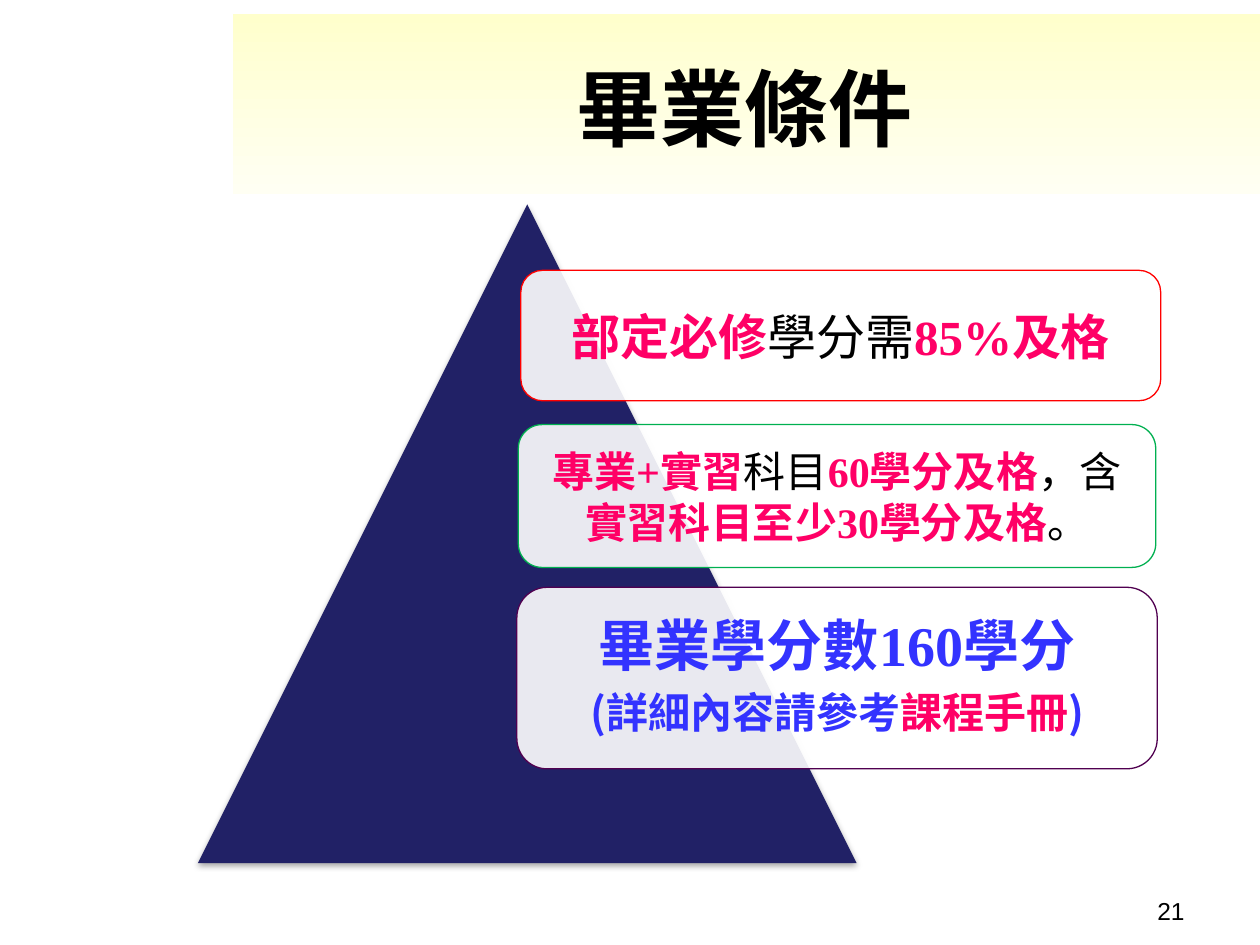
from lxml import etree
from pptx import Presentation
from pptx.dml.color import RGBColor
from pptx.enum.shapes import MSO_SHAPE
from pptx.enum.text import MSO_ANCHOR, PP_ALIGN
from pptx.oxml.ns import qn
from pptx.util import Cm, Pt

RECTANGLE, TRIANGLE = MSO_SHAPE.RECTANGLE, MSO_SHAPE.ISOSCELES_TRIANGLE
ROUNDED = MSO_SHAPE.ROUNDED_RECTANGLE
MIDDLE = MSO_ANCHOR.MIDDLE
CENTER, RIGHT = PP_ALIGN.CENTER, PP_ALIGN.RIGHT

BLACK = RGBColor(0x00, 0x00, 0x00)
WHITE = RGBColor(0xFF, 0xFF, 0xFF)
CREAM = RGBColor(0xFF, 0xFF, 0xCC)
PALE_CREAM = RGBColor(0xFF, 0xFF, 0xF3)
NAVY = RGBColor(0x21, 0x21, 0x66)
PINK = RGBColor(0xFF, 0x00, 0x66)
BLUE = RGBColor(0x33, 0x33, 0xFF)
RED = RGBColor(0xFF, 0x00, 0x00)
GREEN = RGBColor(0x00, 0xB0, 0x50)
PURPLE = RGBColor(0x50, 0x00, 0x50)

HEADING_FONT = "Noto Sans CJK SC"
BODY_FONT = "Times New Roman"
NUMBER_FONT = "Arial"


class SlideBuilder:
    """Holds the shared style and the slide being built."""

    def __init__(self, slide):
        self.slide = slide
        self.east_asian_font = HEADING_FONT

    def place(self, shape, left, top, width, height):
        shape.left, shape.top = Cm(left), Cm(top)
        shape.width, shape.height = Cm(width), Cm(height)

    def add_run(self, paragraph, text, size, color, bold=True, font=BODY_FONT):
        run = paragraph.add_run()
        run.text = text
        run.font.name, run.font.size, run.font.bold = font, Pt(size), bold
        run.font.color.rgb = color
        east_asian = etree.SubElement(run.font._element, qn("a:ea"))
        east_asian.set("typeface", self.east_asian_font)

    def shape(self, kind, left, top, width, height):
        shape = self.slide.shapes.add_shape(
            kind, Cm(left), Cm(top), Cm(width), Cm(height))
        shape.shadow.inherit = False
        shape.line.fill.background()
        return shape

    def banner(self, *box):
        banner = self.shape(RECTANGLE, *box)
        banner.fill.gradient()
        banner.fill.gradient_angle = 270
        for stop, color in zip(banner.fill.gradient_stops, (CREAM, PALE_CREAM)):
            stop.color.rgb = color
        # Behind the title
        self.slide.shapes._spTree.insert(2, banner._element)

    def title(self, text, *box):
        title = self.slide.shapes.title
        self.place(title, *box)
        frame = title.text_frame
        frame.vertical_anchor = MIDDLE
        frame.paragraphs[0].alignment = CENTER
        self.add_run(frame.paragraphs[0], text, 48, BLACK, font=HEADING_FONT)

    def triangle(self, *box):
        triangle = self.shape(TRIANGLE, *box)
        triangle.fill.solid()
        triangle.fill.fore_color.rgb = NAVY
        effects = triangle._element.spPr.find(qn("a:effectLst"))
        shadow = etree.SubElement(
            effects, qn("a:outerShdw"), blurRad=str(Pt(3.1)),
            dist=str(Pt(1.8)), dir="5400000", rotWithShape="0")
        color = etree.SubElement(shadow, qn("a:srgbClr"), val=str(BLACK))
        etree.SubElement(color, qn("a:alpha"), val="35000")

    def condition(self, box, outline, inset, paragraphs, line_spacing=1.0):
        card = self.shape(ROUNDED, *box)
        card.fill.solid()
        card.fill.fore_color.rgb = WHITE
        color = card._element.spPr.find(qn("a:solidFill"))[0]
        etree.SubElement(color, qn("a:alpha"), val="90000")
        card.line.color.rgb = outline
        card.line.width = Pt(0.75)
        frame = card.text_frame
        frame.word_wrap = True
        frame.vertical_anchor = MIDDLE
        frame.margin_left = frame.margin_right = Cm(inset)
        frame.margin_top = frame.margin_bottom = Cm(inset)
        for index, runs in enumerate(paragraphs):
            paragraph = frame.add_paragraph() if index else frame.paragraphs[0]
            paragraph.alignment = CENTER
            paragraph.line_spacing = line_spacing
            paragraph.space_after = Pt(8)
            for run in runs:
                self.add_run(paragraph, *run)

    def page_number(self, text, left, top, width, height):
        number = self.slide.shapes.add_textbox(
            Cm(left), Cm(top), Cm(width), Cm(height))
        number.text_frame.word_wrap = True
        paragraph = number.text_frame.paragraphs[0]
        paragraph.alignment = RIGHT
        self.add_run(paragraph, text, 14, BLACK, False, NUMBER_FONT)


def main():
    deck = Presentation()
    deck.slide_width, deck.slide_height = Cm(25.4), Cm(19.05)
    title_only = deck.slide_layouts[5]
    builder = SlideBuilder(deck.slides.add_slide(title_only))

    # Heading
    builder.banner(4.7, 0.28, 20.7, 3.63)
    builder.title("畢業條件", 5.11, 0.97, 19.81, 2.36)

    # Pyramid behind the conditions
    builder.triangle(3.99, 4.12, 13.28, 13.28)

    # Required credits
    builder.condition((10.5, 5.45, 12.9, 2.63), RED, 0.3, [
        [("部定必修", 28, PINK), ("學分需", 28, BLACK, False),
         ("85%及格", 28, PINK)],
    ])

    # Professional and practical credits
    builder.condition((10.45, 8.56, 12.85, 2.88), GREEN, 0.25, [
        [("專業+實習", 24, PINK), ("科目", 24, BLACK, False),
         ("60學分及格", 24, PINK), ("，含", 24, BLACK, False),
         ("實習科目至少30學分及格", 24, PINK), ("。", 24, BLACK, False)],
    ])

    # Total credits
    builder.condition((10.42, 11.84, 12.91, 3.66), PURPLE, 0.33, [
        [("畢業學分數160學分", 32, BLUE)],
        [("(", 24, BLUE, True, HEADING_FONT), ("詳細內容請參考", 24, BLUE),
         ("課程手冊", 24, PINK), (")", 24, BLUE, True, HEADING_FONT)],
    ], line_spacing=0.9)

    builder.page_number("21", 18.21, 17.93, 5.92, 0.99)
    deck.save("out.pptx")


if __name__ == "__main__":
    main()
